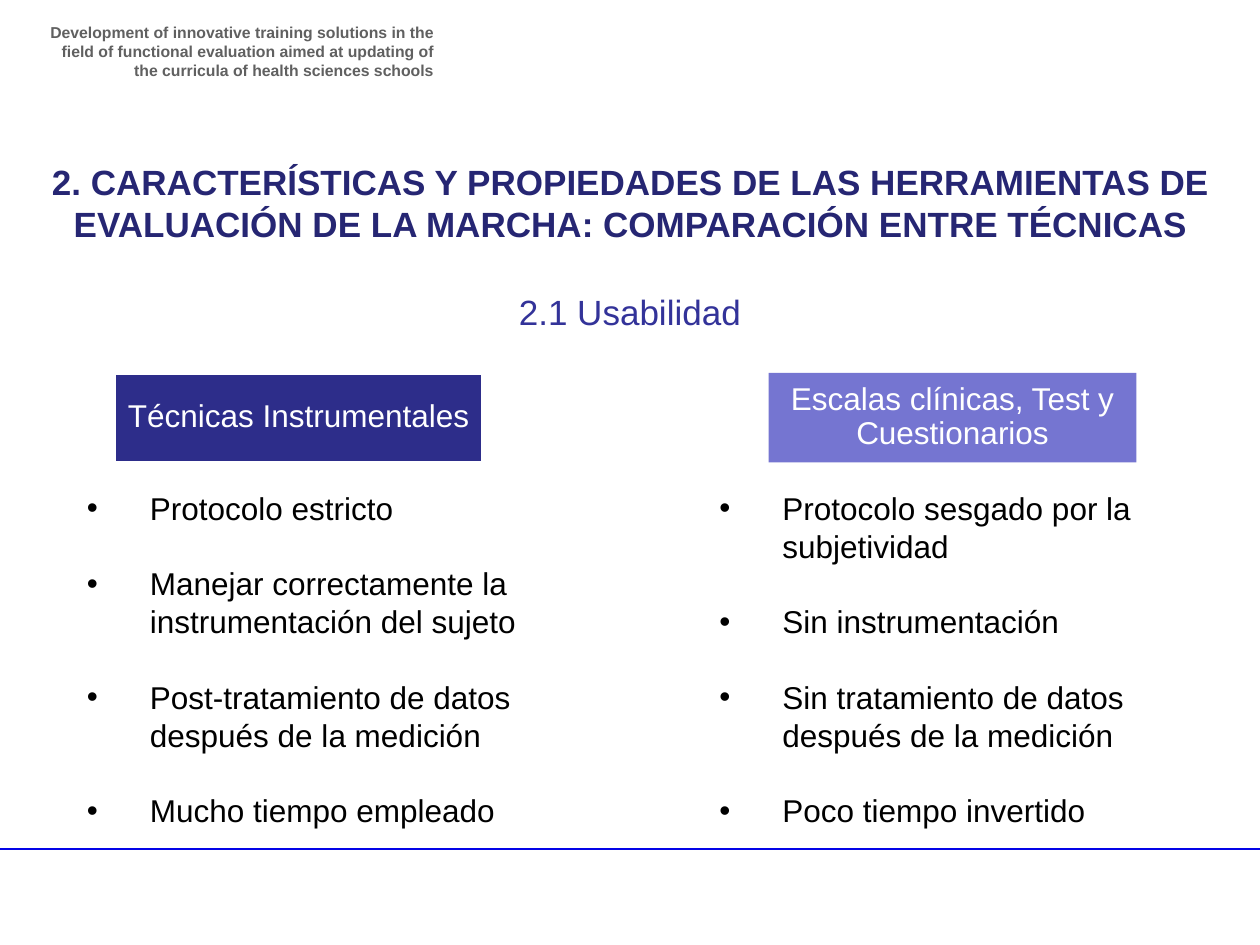
from pptx import Presentation
from pptx.dml.color import RGBColor
from pptx.enum.shapes import MSO_CONNECTOR, MSO_SHAPE
from pptx.enum.text import MSO_ANCHOR, MSO_AUTO_SIZE, PP_ALIGN
from pptx.oxml.ns import qn
from pptx.util import Inches, Pt
from lxml import etree

LEFT, CENTER, RIGHT = PP_ALIGN.LEFT, PP_ALIGN.CENTER, PP_ALIGN.RIGHT
TOP, MIDDLE = MSO_ANCHOR.TOP, MSO_ANCHOR.MIDDLE
TWO_CONTENT_LAYOUT = 3
BULLET_GAP = 21.6

PROJECT = ("Development of innovative training solutions in the ﬁeld of functional "
           "evaluation aimed at updating of the curricula of health sciences schools")
TITLE = ("2. CARACTERÍSTICAS Y PROPIEDADES DE LAS HERRAMIENTAS DE EVALUACIÓN "
         "DE LA MARCHA: COMPARACIÓN ENTRE TÉCNICAS")
SUBTITLE = "2.1 Usabilidad"
COLUMNS = [
    {"heading": "Técnicas Instrumentales", "fill": "2D2D8A", "outline": "FFFFFF",
     "heading_left": 0.91, "list_left": 0.59, "list_width": 4.57,
     "items": ["Protocolo estricto",
               "Manejar correctamente la instrumentación del sujeto",
               "Post-tratamiento de datos después de la medición",
               "Mucho tiempo empleado"]},
    {"heading": "Escalas clínicas, Test y Cuestionarios", "fill": "7575D1", "outline": None,
     "heading_left": 6.1, "list_left": 5.61, "list_width": 3.9,
     "items": ["Protocolo sesgado por la subjetividad",
               "Sin instrumentación",
               "Sin tratamiento de datos después de la medición",
               "Poco tiempo invertido"]},
]


def rgb(value):
    """Turn a hex string into a colour."""
    return RGBColor.from_string(value)


def place(shape, left, top, width, height):
    """Move and size a shape, in inches."""
    shape.left, shape.top = Inches(left), Inches(top)
    shape.width, shape.height = Inches(width), Inches(height)


def write(shape, lines, size, color, align=CENTER, bold=False, anchor=TOP,
          inset=None, spacing=1.0, gap=0, indent=None):
    """Fill a shape with formatted paragraphs."""
    frame = shape.text_frame
    frame.word_wrap = True
    frame.auto_size = MSO_AUTO_SIZE.NONE
    frame.vertical_anchor = anchor
    if inset is not None:
        frame.margin_left = frame.margin_right = Inches(inset)
        frame.margin_top = frame.margin_bottom = Inches(inset)
    for index, line in enumerate(lines):
        paragraph = frame.add_paragraph() if index else frame.paragraphs[0]
        paragraph.alignment = align
        paragraph.line_spacing = spacing
        paragraph.space_before = Pt(gap if index else 0)
        if indent:
            properties = paragraph._p.get_or_add_pPr()
            properties.set("marL", str(Inches(indent)))
            properties.set("indent", str(-Inches(indent)))
            etree.SubElement(properties, qn("a:buChar")).set("char", "•")
        run = paragraph.add_run()
        run.text = line
        run.font.name, run.font.size, run.font.bold = "Arial", Pt(size), bold
        run.font.color.rgb = rgb(color)


def add_text(slide, box, *args, **kwargs):
    """Add a text box with formatted text."""
    write(slide.shapes.add_textbox(*map(Inches, box)), *args, **kwargs)


def add_heading(slide, column):
    """Add the coloured heading of a column."""
    shape = slide.shapes.add_shape(
        MSO_SHAPE.RECTANGLE, *map(Inches, (column["heading_left"], 2.96, 2.92, 0.71)))
    shape.shadow.inherit = False
    shape.fill.solid()
    shape.fill.fore_color.rgb = rgb(column["fill"])
    if column["outline"]:
        shape.line.color.rgb = rgb(column["outline"])
        shape.line.width = Pt(2)
    else:
        shape.line.fill.background()
    write(shape, [column["heading"]], 18, "FFFFFF", anchor=MIDDLE, inset=0.01, spacing=0.9)


def add_footer_line(slide):
    """Draw the rule across the bottom of the slide."""
    line = slide.shapes.add_connector(
        MSO_CONNECTOR.STRAIGHT, *map(Inches, (0, 6.74, 10, 6.74)))
    line.line.color.rgb = rgb("0404E6")
    line.line.width = Pt(1)
    etree.SubElement(line._element.spPr, qn("a:effectLst"))


def main():
    """Build and save the slide."""
    presentation = Presentation()
    presentation.slide_width, presentation.slide_height = Inches(10), Inches(7.5)
    slide = presentation.slides.add_slide(presentation.slide_layouts[TWO_CONTENT_LAYOUT])
    title, *lists = slide.placeholders

    add_footer_line(slide)
    add_text(slide, (0.28, 0.13, 3.26, 0.47), [PROJECT], 9, "606060", align=RIGHT, bold=True)
    place(title, 0.28, 1.22, 9.45, 0.77)
    write(title, [TITLE], 20, "262673", bold=True)
    add_text(slide, (3.85, 2.26, 2.3, 0.44), [SUBTITLE], 20, "333399")
    for column, body in zip(COLUMNS, lists):
        add_heading(slide, column)
        place(body, column["list_left"], 3.83, column["list_width"], 2.83)
        write(body, column["items"], 18, "000000", align=LEFT, gap=BULLET_GAP, indent=0.5)
    presentation.save("out.pptx")


if __name__ == "__main__":
    main()
